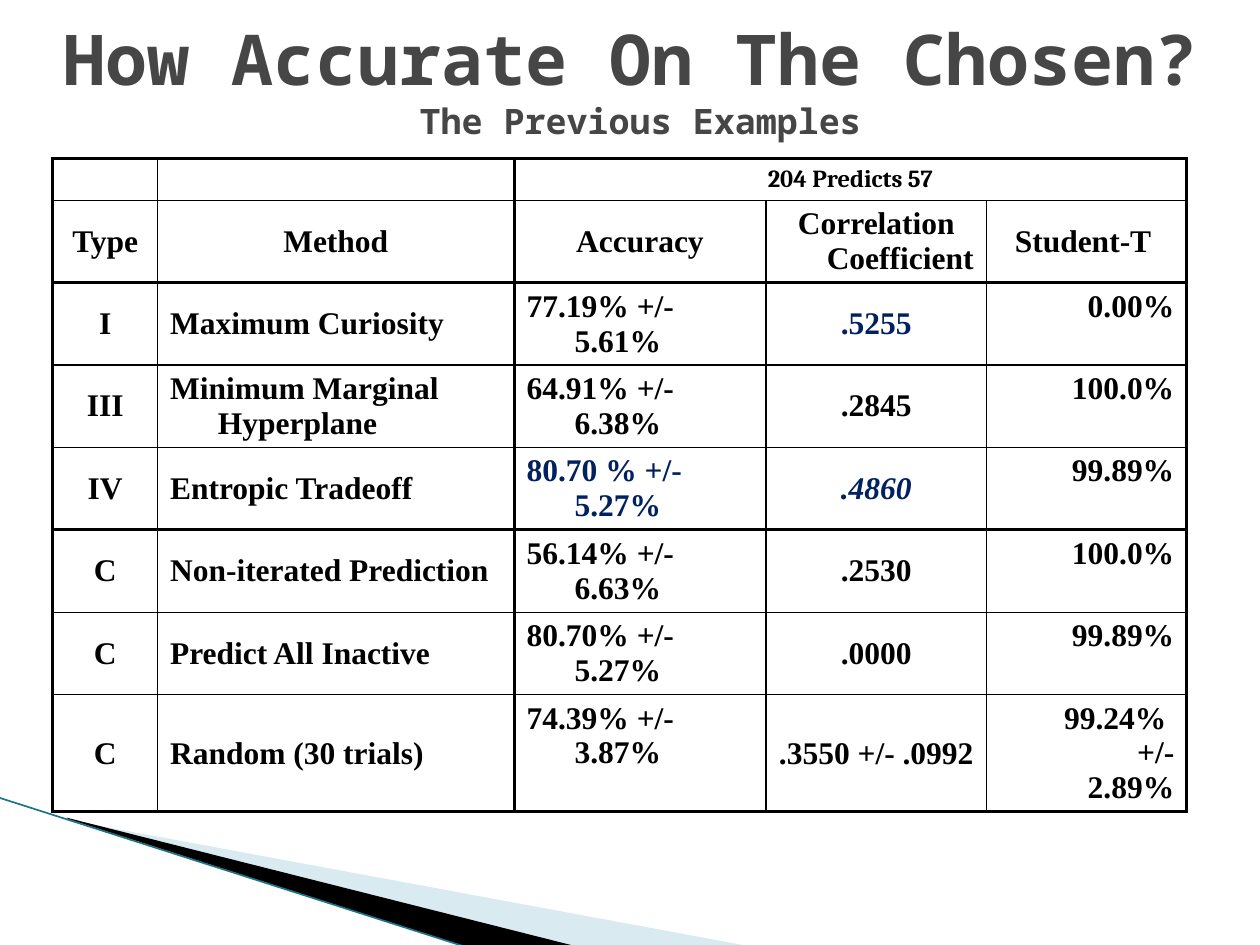
from dataclasses import dataclass

from lxml.etree import SubElement
from pptx import Presentation
from pptx.dml.color import RGBColor
from pptx.enum.shapes import MSO_CONNECTOR
from pptx.enum.text import MSO_ANCHOR, MSO_AUTO_SIZE, PP_ALIGN
from pptx.oxml.ns import qn
from pptx.util import Inches, Pt


@dataclass(frozen=True)
class Theme:
    title_color: str = "464646"
    ink: str = "000000"
    highlight: str = "002060"
    pale_wedge: str = "A0CBDC"
    edge_line: str = "1B7587"
    title_font: str = "Noto Sans Mono"
    group_font: str = "Cambria"
    table_font: str = "Times New Roman"
    title_size: int = 40
    subtitle_size: int = 20
    group_size: int = 14
    table_size: int = 18


THEME = Theme()

GROUP_HEADING = "204 Predicts 57"
HEADINGS = ["Type", "Method", "Accuracy", "Correlation Coefficient", "Student-T "]
RESULTS = [
    ["I", "Maximum Curiosity", "77.19% +/- 5.61%", ".5255", "0.00%"],
    ["III", "Minimum Marginal Hyperplane", "64.91% +/- 6.38%", ".2845", "100.0%"],
    ["IV", "Entropic Tradeoff", "80.70 % +/- 5.27%", ".4860", "99.89%"],
    ["C", "Non-iterated Prediction", "56.14% +/- 6.63%", ".2530", "100.0%"],
    ["C", "Predict All Inactive", "80.70% +/- 5.27%", ".0000", "99.89%"],
    ["C", "Random (30 trials)", "74.39% +/- 3.87%", ".3550 +/- .0992", "99.24% \n+/- 2.89%"],
]
COLUMN_WIDTHS = [0.83, 2.83, 2, 1.75, 1.59]
ROW_HEIGHTS = [0.33] + [0.65] * 6 + [0.93]
COLUMN_ALIGNMENTS = [PP_ALIGN.CENTER, PP_ALIGN.LEFT, PP_ALIGN.LEFT, PP_ALIGN.CENTER, PP_ALIGN.RIGHT]
TOP_ANCHORED_COLUMNS = {2, 4}
HEAVY_COLUMN_EDGES = {0, 2, 5}
HEAVY_ROW_EDGES = {0, 2, 5, 8}
# Best results, by (row, column) in the table
HIGHLIGHTS = {
    (2, 3): {"color": THEME.highlight},
    (4, 2): {"color": THEME.highlight},
    (4, 3): {"color": THEME.highlight, "italic": True},
}


def write_text(paragraph, text, *, font=THEME.table_font, size=THEME.table_size,
               color=THEME.ink, italic=False):
    """Add bold text to a paragraph, with a line break at each newline."""
    for index, line in enumerate(text.split("\n")):
        if index:
            paragraph.add_line_break()
        run = paragraph.add_run()
        run.text = line
        run.font.name = font
        run.font.size = Pt(size)
        run.font.bold = True
        run.font.italic = italic
        run.font.color.rgb = RGBColor.from_string(color)


def add_wedge(slide, points, color, alpha=None):
    corners = [(Inches(x), Inches(y)) for x, y in points]
    builder = slide.shapes.build_freeform(*corners[0])
    builder.add_line_segments(corners[1:], close=True)
    wedge = builder.convert_to_shape()
    wedge.shadow.inherit = False
    wedge.line.fill.background()
    wedge.fill.solid()
    wedge.fill.fore_color.rgb = RGBColor.from_string(color)
    if alpha is not None:
        color_element = wedge.fill._xPr.find(".//" + qn("a:srgbClr"))
        SubElement(color_element, qn("a:alpha"), val=str(alpha * 1000))


def add_edge_line(slide, start, end):
    connector = slide.shapes.add_connector(
        MSO_CONNECTOR.STRAIGHT, *(Inches(value) for value in start + end))
    connector.line.color.rgb = RGBColor.from_string(THEME.edge_line)
    connector.line.width = Pt(0.95)
    SubElement(connector._element.spPr, qn("a:effectLst"))


def fill_title(slide):
    title = slide.shapes.title
    title.left, title.top, title.width, title.height = (
        Inches(value) for value in (0, 0, 10, 1.25))
    frame = title.text_frame
    frame.word_wrap = True
    frame.auto_size = MSO_AUTO_SIZE.NONE
    frame.vertical_anchor = MSO_ANCHOR.MIDDLE
    paragraph = frame.paragraphs[0]
    paragraph.alignment = PP_ALIGN.CENTER
    style = {"font": THEME.title_font, "color": THEME.title_color}
    write_text(paragraph, "How Accurate On The Chosen?", size=THEME.title_size, **style)
    paragraph.add_line_break()
    write_text(paragraph, " The Previous Examples", size=THEME.subtitle_size, **style)


def set_borders(cell, row, column):
    """Draw heavy lines around the groups of rows and columns, thin ones inside."""
    right = column + (cell.span_width if cell.is_merge_origin else 1)
    heavy_sides = {
        "a:lnL": column in HEAVY_COLUMN_EDGES,
        "a:lnR": right in HEAVY_COLUMN_EDGES,
        "a:lnT": row in HEAVY_ROW_EDGES,
        "a:lnB": row + 1 in HEAVY_ROW_EDGES,
    }
    properties = cell._tc.get_or_add_tcPr()
    for tag, heavy in heavy_sides.items():
        border = SubElement(properties, qn(tag), w=str(Pt(2 if heavy else 1)))
        fill = SubElement(border, qn("a:solidFill"))
        SubElement(fill, qn("a:srgbClr"), val=THEME.ink)


def fill_cell(cell, text, alignment, anchor, **text_format):
    cell.vertical_anchor = anchor
    paragraph = cell.text_frame.paragraphs[0]
    paragraph.alignment = alignment
    properties = paragraph._p.get_or_add_pPr()
    properties.set("marL", str(Inches(0.38)))
    properties.set("indent", str(-Inches(0.38)))
    if text:
        write_text(paragraph, text, **text_format)
    else:
        SubElement(paragraph._p, qn("a:endParaRPr"), sz=str(Pt(12).centipoints))


def add_results_table(slide):
    table = slide.shapes.add_table(
        len(ROW_HEIGHTS), len(COLUMN_WIDTHS), Inches(0.42), Inches(1.26),
        Inches(sum(COLUMN_WIDTHS)), Inches(sum(ROW_HEIGHTS))).table
    table.first_row = False
    table.horz_banding = False
    for column, width in zip(table.columns, COLUMN_WIDTHS):
        column.width = Inches(width)
    for row, height in zip(table.rows, ROW_HEIGHTS):
        row.height = Inches(height)
    table.cell(0, 2).merge(table.cell(0, 4))

    contents = [["", "", GROUP_HEADING, "", ""], HEADINGS] + RESULTS
    for row, texts in enumerate(contents):
        for column, text in enumerate(texts):
            cell = table.cell(row, column)
            if not cell.is_spanned:
                set_borders(cell, row, column)
            cell.fill.background()
            is_heading = row < 2
            alignment = PP_ALIGN.CENTER if is_heading else COLUMN_ALIGNMENTS[column]
            at_top = not is_heading and column in TOP_ANCHORED_COLUMNS
            text_format = HIGHLIGHTS.get((row, column), {})
            if row == 0:
                text_format = {"font": THEME.group_font, "size": THEME.group_size}
            fill_cell(cell, text, alignment,
                      MSO_ANCHOR.TOP if at_top else MSO_ANCHOR.MIDDLE, **text_format)


def main():
    presentation = Presentation()
    presentation.slide_width = Inches(10)
    presentation.slide_height = Inches(7.5)
    slide = presentation.slides.add_slide(presentation.slide_layouts[5])

    # Corner decoration
    add_wedge(slide, [(0.55, 6.51), (5.95, 7.51), (4.56, 7.51), (0.55, 6.5)],
              THEME.pale_wedge, alpha=40)
    add_wedge(slide, [(0.53, 6.49), (4.57, 7.51), (3.72, 7.52), (0.54, 6.5)], THEME.ink)
    add_edge_line(slide, (-0.01, 6.33), (3.71, 7.52))

    # Title and results
    fill_title(slide)
    add_results_table(slide)

    presentation.save("out.pptx")


if __name__ == "__main__":
    main()
